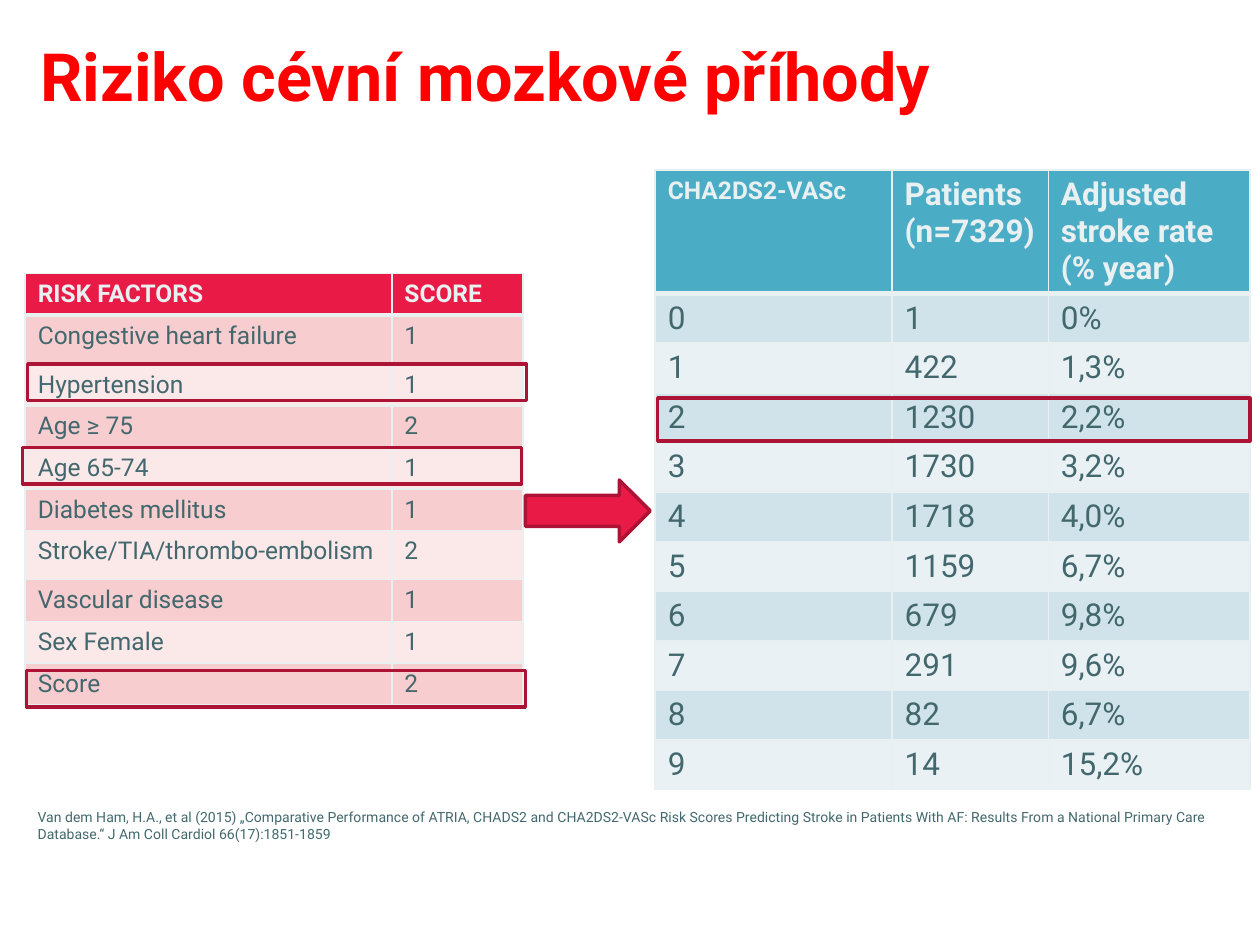
from lxml import etree
from pptx import Presentation
from pptx import util as u
from pptx.dml.color import RGBColor
from pptx.enum import shapes, text
from pptx.oxml.ns import qn

FONT = "Roboto"
RED = RGBColor(0xFF, 0, 0)
CRIMSON = RGBColor(0xEA, 0x1A, 0x46)
DARK = RGBColor(0xAD, 0x13, 0x34)
TEAL = RGBColor(0x4B, 0xAC, 0xC6)
INK = RGBColor(0x42, 0x68, 0x6D)
PALE = RGBColor(0xE8, 0xF0, 0xF1)
PINKS = RGBColor(0xF7, 0xCD, 0xCF), RGBColor(0xFB, 0xE8, 0xE9)
BLUES = RGBColor(0xD0, 0xE3, 0xEA), RGBColor(0xE9, 0xF1, 0xF5)

TITLE = "Riziko cévní mozkové příhody"
SOURCE = (
    "Van dem Ham, H.A., et al (2015) „Comparative Performance of ATRIA, CHADS2 "
    "and CHA2DS2-VASc Risk Scores Predicting Stroke in Patients With AF: Results "
    "From a National Primary Care Database.“ J Am Coll Cardiol 66(17):1851-1859"
)
FACTORS = [
    ("RISK FACTORS", "SCORE"),
    ("Congestive heart failure", "1"),
    ("Hypertension", "1"),
    ("Age ≥ 75", "2"),
    ("Age 65-74", "1"),
    ("Diabetes mellitus", "1"),
    ("Stroke/TIA/thrombo-embolism", "2"),
    ("Vascular disease", "1"),
    ("Sex Female", "1"),
    ("Score", "2"),
]
RATES = [
    ("CHA2DS2-VASc", "Patients (n=7329)", "Adjusted stroke rate (% year)"),
    ("0", "1", "0%"),
    ("1", "422", "1,3%"),
    ("2", "1230", "2,2%"),
    ("3", "1730", "3,2%"),
    ("4", "1718", "4,0%"),
    ("5", "1159", "6,7%"),
    ("6", "679", "9,8%"),
    ("7", "291", "9,6%"),
    ("8", "82", "6,7%"),
    ("9", "14", "15,2%"),
]
TALL = {1, 6}
FACTOR_ROWS = [0.39 if i in TALL else 0.33 for i in range(len(FACTORS))]
RATE_ROWS = [0.97] + [0.39] * (len(RATES) - 1)
MARKS = [
    (0.18, 3.55, 3.96, 0.29),
    (0.22, 2.89, 3.96, 0.29),
    (0.21, 5.32, 3.96, 0.29),
    (5.22, 3.16, 4.7, 0.34),
]
ARROW = (4.17, 3.81, 0.99, 0.49)


def inches(box):
    return [u.Inches(v) for v in box]


def style(frame, size, color, bold=False):
    for par in frame.paragraphs:
        font = par.font
        font.name, font.size, font.bold = FONT, u.Pt(size), bold
        font.color.rgb = color


def border(cell, row):
    props = cell._tc.get_or_add_tcPr()
    heavy = {"lnB": row == 0, "lnT": row == 1}
    for side in ("lnL", "lnR", "lnT", "lnB"):
        width = u.Pt(3 if heavy.get(side) else 1)
        line = etree.SubElement(props, qn("a:" + side), w=str(width))
        fill = etree.SubElement(line, qn("a:solidFill"))
        etree.SubElement(fill, qn("a:srgbClr"), val=str(PALE))


def grid(slide, data, left, top, cols, rows, head, bands, size):
    box = inches((left, top, sum(cols), sum(rows)))
    table = slide.shapes.add_table(len(rows), len(cols), *box).table
    for col, width in zip(table.columns, cols):
        col.width = u.Inches(width)
    for r, line in enumerate(data):
        table.rows[r].height = u.Inches(rows[r])
        for c, word in enumerate(line):
            cell = table.cell(r, c)
            cell.text = word
            border(cell, r)
            cell.fill.solid()
            cell.fill.fore_color.rgb = bands[(r - 1) % 2] if r else head
            points = 14 if (r, c) == (0, 0) else size
            style(cell.text_frame, points, INK if r else PALE, r == 0)


def mark(slide, kind, box, fill=None):
    shape = slide.shapes.add_shape(kind, *inches(box))
    shape.shadow.inherit = False
    if fill is None:
        shape.fill.background()
    else:
        shape.fill.solid()
        shape.fill.fore_color.rgb = fill
    shape.line.color.rgb = DARK
    shape.line.width = u.Pt(2)


def main():
    deck = Presentation()
    deck.slide_width, deck.slide_height = u.Inches(10), u.Inches(7.5)
    slide = deck.slides.add_slide(deck.slide_layouts[5])

    title = slide.shapes.title
    title.left, title.top, title.width, title.height = inches((0.22, 0.2, 7.66, 0.49))
    frame = title.text_frame
    frame.text = TITLE
    frame.auto_size = text.MSO_AUTO_SIZE.NONE
    frame.vertical_anchor = text.MSO_ANCHOR.TOP
    frame.margin_top = u.Inches(0.08)
    frame.paragraphs[0].alignment = text.PP_ALIGN.LEFT
    style(frame, 38, RED, True)

    grid(slide, FACTORS, 0.2, 2.17, (2.91, 1.04), FACTOR_ROWS, CRIMSON, PINKS, 14)
    grid(slide, RATES, 5.2, 1.35, (1.88, 1.24, 1.6), RATE_ROWS, TEAL, BLUES, 18)

    for box in MARKS:
        mark(slide, shapes.MSO_SHAPE.RECTANGLE, box)
    mark(slide, shapes.MSO_SHAPE.RIGHT_ARROW, ARROW, CRIMSON)

    note = slide.shapes.add_textbox(*inches((0.2, 6.37, 9.98, 0.37))).text_frame
    note.word_wrap = True
    note.text = SOURCE
    style(note, 8, INK)

    deck.save("out.pptx")


if __name__ == "__main__":
    main()
